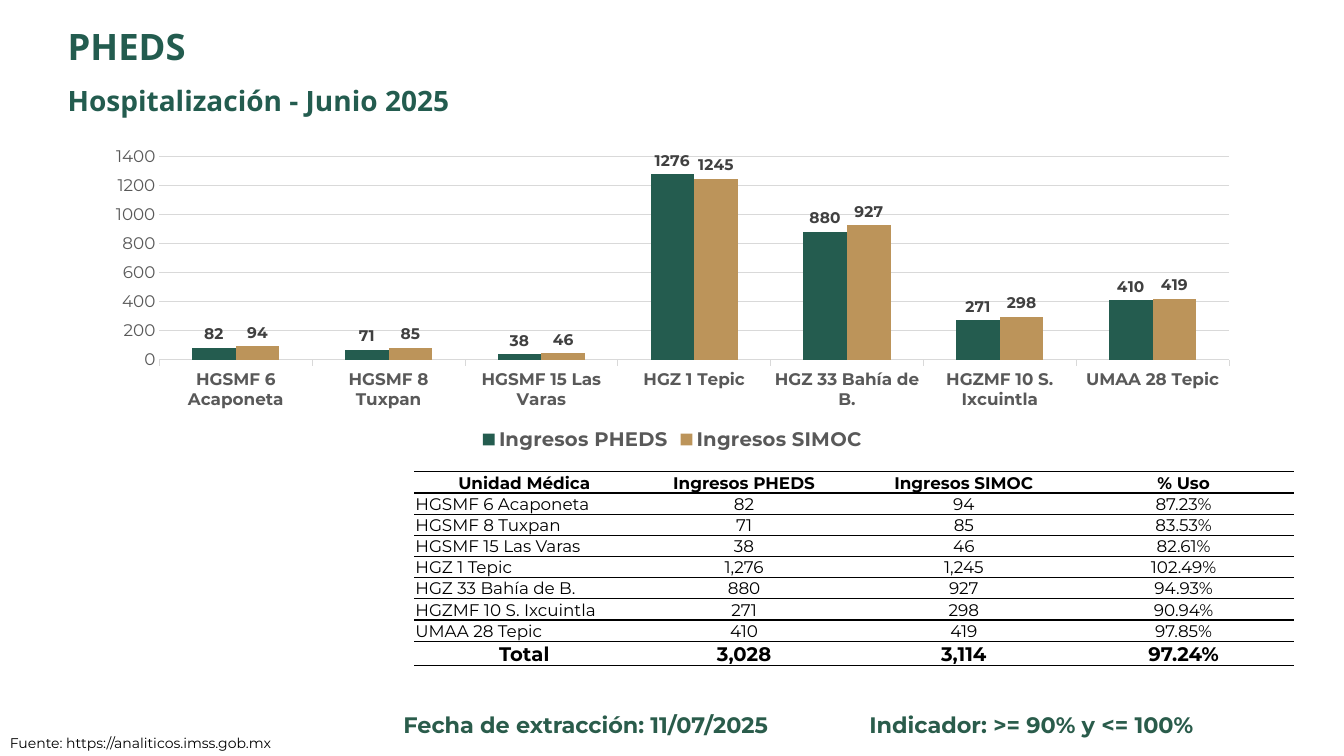
import pptx
import pptx.util
import pptx.chart.data
from pptx.dml.color import RGBColor
from pptx.enum.chart import XL_CHART_TYPE, XL_LABEL_POSITION, XL_LEGEND_POSITION, XL_TICK_MARK
from pptx.enum.text import MSO_ANCHOR, PP_ALIGN
from pptx.oxml import parse_xml
from pptx.oxml.ns import nsdecls
from pptx.util import Inches, Pt

TITLE = "PHEDS"
SUBTITLE = "Hospitalización - Junio 2025"
SOURCE = "Fuente: https://analiticos.imss.gob.mx"
NOTES = [
    ("Fecha de extracción: 11/07/2025", (3.29, 7.01, 5.04, 0.37)),
    ("Indicador: >= 90% y <= 100%", (7.34, 7.01, 5.78, 0.37)),
]
SERIES = [("Ingresos PHEDS", "245C4F"), ("Ingresos SIMOC", "BC945A")]
HEADER = ["Unidad Médica", *(name for name, _ in SERIES), "% Uso"]
UNITS = [
    ("HGSMF 6 Acaponeta", 82, 94),
    ("HGSMF 8 Tuxpan", 71, 85),
    ("HGSMF 15 Las Varas", 38, 46),
    ("HGZ 1 Tepic", 1276, 1245),
    ("HGZ 33 Bahía de B.", 880, 927),
    ("HGZMF 10 S. Ixcuintla", 271, 298),
    ("UMAA 28 Tepic", 410, 419),
]
CHART_BOX = (0.92, 1.39, 11.5, 3.13)
TABLE_BOX = (4.11, 4.68, 8.72, 1.92)
ROW_H, TOTAL_H = 0.21, 0.24

HEADING = {"name": "Noto Sans", "bold": True, "color": "235C4F"}
TITLE_FONT = {**HEADING, "size": 26}
SUBTITLE_FONT = {**HEADING, "size": 20}
BODY = {"name": "Montserrat", "bold": False, "color": "000000"}
SOURCE_FONT = {**BODY, "size": 10}
CELL_FONT = {**BODY, "size": 12}
HEADER_FONT = {**CELL_FONT, "bold": True}
TOTAL_FONT = {**HEADER_FONT, "size": 14}
NOTE_FONT = {**BODY, "size": 16, "bold": True, "color": "2A5C4B"}
VALUE_FONT = {**BODY, "size": 12, "color": "595959"}
CATEGORY_FONT = {**VALUE_FONT, "bold": True}
LEGEND_FONT = {**CATEGORY_FONT, "size": 14}
LABEL_FONT = {**CATEGORY_FONT, "size": 11, "color": "404040"}


def rgb(value):
    return RGBColor.from_string(value)


def set_font(font, fmt):
    for key, value in fmt.items():
        if key == "color":
            font.color.rgb = rgb(value)
        else:
            setattr(font, key, Pt(value) if key == "size" else value)


def inches(box):
    return [Inches(v) for v in box]


def write(tf, text, fmt, align=PP_ALIGN.LEFT):
    p = tf.paragraphs[0]
    p.alignment = align
    r = p.add_run()
    r.text = text
    set_font(r.font, fmt)
    return p


def add_heading(sp, text, top, fmt):
    sp.left, sp.top, sp.width, sp.height = inches((0.57, top, 9.48, 0.49))
    sp.text_frame.vertical_anchor = MSO_ANCHOR.TOP
    p = write(sp.text_frame, text, fmt)
    p.line_spacing = 0.9
    p.space_before = Pt(0)


def add_text(s, text, box, fmt, align, wrap):
    tf = s.shapes.add_textbox(*inches(box)).text_frame
    tf.word_wrap = wrap
    write(tf, text, fmt, align)


def set_borders(cell):
    tc_pr = cell._tc.get_or_add_tcPr()
    for i, side in enumerate("LRTB"):
        fill = ('<a:solidFill><a:srgbClr val="000000"/></a:solidFill>'
                if side in "TB" else "<a:noFill/>")
        tc_pr.insert(i, parse_xml(
            f'<a:ln{side} {nsdecls("a")} w="{Pt(1)}">{fill}</a:ln{side}>'))


def add_chart(s):
    data = pptx.chart.data.CategoryChartData()
    data.categories = [unit[0] for unit in UNITS]
    for i, (name, _) in enumerate(SERIES, 1):
        data.add_series(name, [unit[i] for unit in UNITS])
    chart = s.shapes.add_chart(
        XL_CHART_TYPE.COLUMN_CLUSTERED, *inches(CHART_BOX), data).chart
    set_font(chart.font, SOURCE_FONT)
    chart.has_title = False
    chart.has_legend = True
    chart.legend.position = XL_LEGEND_POSITION.BOTTOM
    chart.legend.include_in_layout = False
    set_font(chart.legend.font, LEGEND_FONT)

    cat, val = chart.category_axis, chart.value_axis
    set_font(cat.tick_labels.font, CATEGORY_FONT)
    set_font(val.tick_labels.font, VALUE_FONT)
    val.minimum_scale, val.maximum_scale, val.major_unit = 0, 1400, 200
    val.major_tick_mark = XL_TICK_MARK.NONE
    val.format.line.fill.background()
    for line in (cat.format.line, val.major_gridlines.format.line):
        line.color.rgb = rgb("D9D9D9")
        line.width = Pt(0.75)

    plot = chart.plots[0]
    plot.gap_width = 150
    plot.vary_by_categories = False
    for series, (_, color) in zip(plot.series, SERIES):
        series.format.fill.solid()
        series.format.fill.fore_color.rgb = rgb(color)
        labels = series.data_labels
        labels.show_value = True
        labels.position = XL_LABEL_POSITION.OUTSIDE_END
        set_font(labels.font, LABEL_FONT)


def add_table(s):
    totals = ("Total", *(sum(unit[i] for unit in UNITS) for i in (1, 2)))
    rows = [HEADER] + [(name, f"{pheds:,}", f"{simoc:,}", f"{pheds / simoc:.2%}")
                       for name, pheds, simoc in [*UNITS, totals]]
    last = len(rows) - 1
    table = s.shapes.add_table(len(rows), len(HEADER), *inches(TABLE_BOX)).table
    table.first_row = table.horz_banding = False
    for col in table.columns:
        col.width = Inches(TABLE_BOX[2] / len(HEADER))
    for i, row in enumerate(rows):
        table.rows[i].height = Inches(TOTAL_H if i == last else ROW_H)
        fmt = {0: HEADER_FONT, last: TOTAL_FONT}.get(i, CELL_FONT)
        for j, text in enumerate(row):
            cell = table.cell(i, j)
            unit_name = j == 0 and 0 < i < last
            cell.margin_left = cell.margin_right = cell.margin_top = Inches(0.01)
            cell.margin_bottom = 0
            cell.vertical_anchor = MSO_ANCHOR.TOP if unit_name else MSO_ANCHOR.MIDDLE
            cell.fill.background()
            set_borders(cell)
            write(cell.text_frame, text, fmt,
                  PP_ALIGN.LEFT if unit_name else PP_ALIGN.CENTER)


def main():
    prs = pptx.Presentation()
    prs.slide_width, prs.slide_height = Inches(13.33), Inches(7.5)
    s = prs.slides.add_slide(prs.slide_layouts[0])
    add_heading(s.shapes.title, TITLE, 0.24, TITLE_FONT)
    add_heading(s.placeholders[1], SUBTITLE, 0.82, SUBTITLE_FONT)
    add_text(s, SOURCE, (0, 7.24, 2.92, 0.27), SOURCE_FONT, PP_ALIGN.LEFT, False)
    add_table(s)
    add_chart(s)
    for text, box in NOTES:
        add_text(s, text, box, NOTE_FONT, PP_ALIGN.CENTER, True)
    prs.save("out.pptx")


if __name__ == "__main__":
    main()
